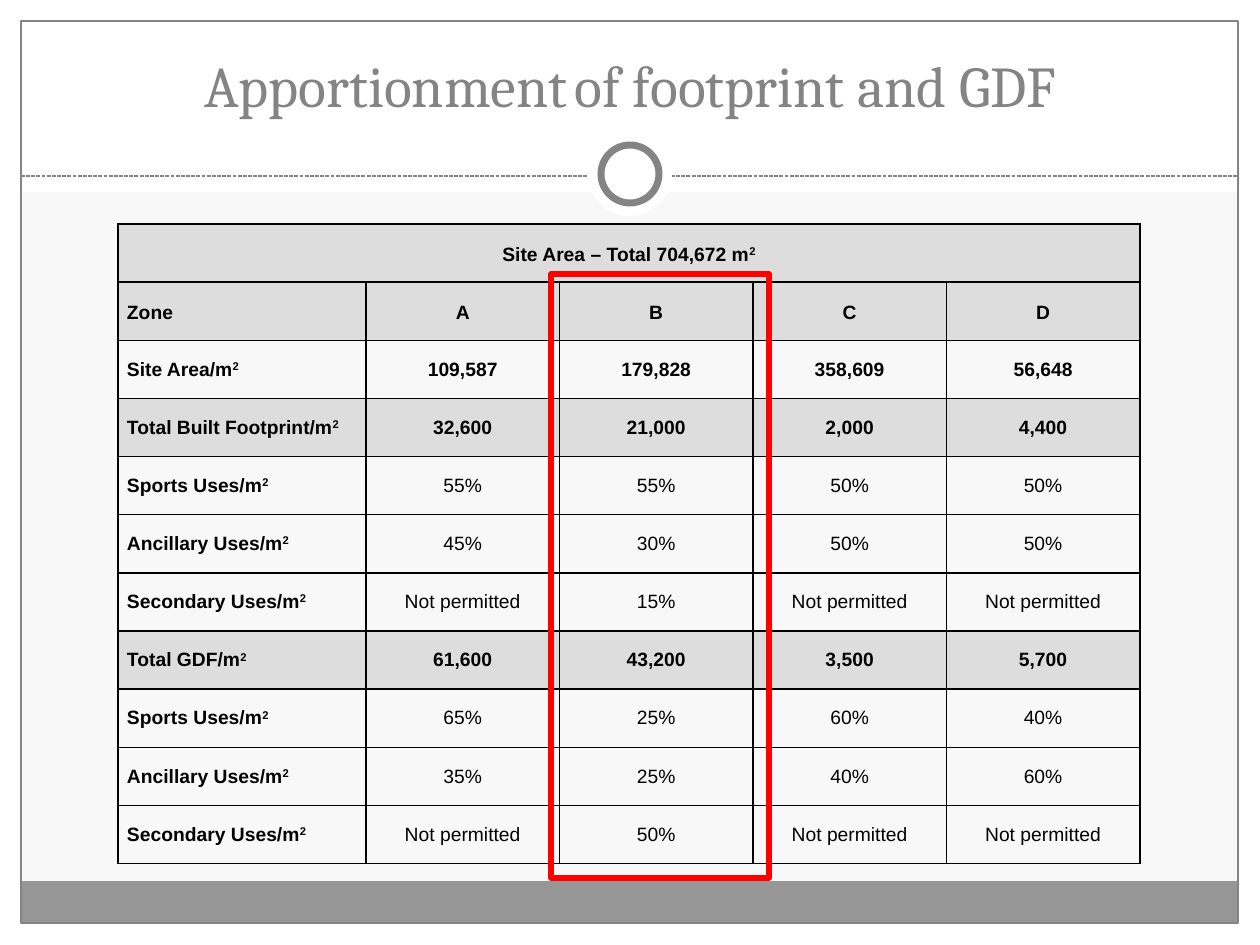
import pptx
import pptx.util
import pptx.dml.color
import pptx.enum.dml
import pptx.enum.shapes
import pptx.enum.text
import pptx.oxml
import pptx.oxml.ns

# Content
TITLE = [("Apportionment", 33), (" ", 18), ("of footprint and GDF", 33)]
CAPTION = "Site Area – Total 704,672 m²"
ZONES = ["Zone", "A", "B", "C", "D"]
NO = "Not permitted"
USES = [  # label, values, bold values, shaded row
    ("Site Area/m²", ["109,587", "179,828", "358,609", "56,648"], True, False),
    ("Total Built Footprint/m²", ["32,600", "21,000", "2,000", "4,400"], True, True),
    ("Sports Uses/m²", ["55%", "55%", "50%", "50%"], False, False),
    ("Ancillary Uses/m²", ["45%", "30%", "50%", "50%"], False, False),
    ("Secondary Uses/m²", [NO, "15%", NO, NO], False, False),
    ("Total GDF/m²", ["61,600", "43,200", "3,500", "5,700"], True, True),
    ("Sports Uses/m²", ["65%", "25%", "60%", "40%"], False, False),
    ("Ancillary Uses/m²", ["35%", "25%", "40%", "60%"], False, False),
    ("Secondary Uses/m²", [NO, "50%", NO, NO], False, False),
]

# Layout, in px
WIDTH, HEIGHT = 1260, 945
TABLE_BOX = (118, 224, 1022, 640)
LABEL_WIDTH = 248
HIGHLIGHT_BOX = (551, 274, 218, 604)
WHITE, GREY, FOOTER, SHADE, RED, BLACK = (
    "FFFFFF", "848484", "969696", "DDDDDD", "FF0000", "000000")
BACKDROP = [  # preset, box, fill, line, line width in pt
    ("RECTANGLE", (0, 924, WIDTH, 21), WHITE, None, 0),
    ("RECTANGLE", (0, 0, WIDTH, 192), WHITE, None, 0),
    ("RECTANGLE", (0, 0, 21, HEIGHT), WHITE, None, 0),
    ("RECTANGLE", (1239, 0, 21, HEIGHT), WHITE, None, 0),
    ("RECTANGLE", (21, 881, 1217, 43), FOOTER, None, 0),
    ("RECTANGLE", (21, 21, 1217, 902), None, GREY, 0.75),
]
MEDALLION = [
    ("OVAL", (588, 132, 84, 84), WHITE, None, 0),
    ("OVAL", (601, 145, 58, 58), WHITE, GREY, 4),
]

ALIGN = pptx.enum.text.PP_ALIGN
MIDDLE = pptx.enum.text.MSO_ANCHOR.MIDDLE


def px(length):
    return pptx.util.Emu(round(length * 914400 / 126))


def color(value):
    return pptx.dml.color.RGBColor.from_string(value)


def set_fill(fill, value):
    if value:
        fill.solid()
        fill.fore_color.rgb = color(value)
    else:
        fill.background()


def draw(preset, box, fill, line, width):
    kind = getattr(pptx.enum.shapes.MSO_SHAPE, preset)
    shape = slide.shapes.add_shape(kind, *map(px, box))
    shape.shadow.inherit = False
    set_fill(shape.fill, fill)
    set_fill(shape.line.fill, line)
    if line:
        shape.line.width = pptx.util.Pt(width)


def add_run(paragraph, text, size, font, value, bold=False):
    run = paragraph.add_run()
    run.text = text
    run.font.size = pptx.util.Pt(size)
    run.font.name = font
    run.font.bold = bold
    run.font.color.rgb = color(value)
    return run


def add_border(cell):
    properties = cell._tc.get_or_add_tcPr()
    for side in ("lnL", "lnR", "lnT", "lnB"):
        properties.append(pptx.oxml.parse_xml(
            f'<a:{side} {pptx.oxml.ns.nsdecls("a")} w="12700"><a:solidFill>'
            f'<a:srgbClr val="{BLACK}"/></a:solidFill></a:{side}>'))


def fill_cell(cell, text, align, bold, shade, before, after, spacing=None):
    add_border(cell)
    set_fill(cell.fill, shade)
    cell.vertical_anchor = MIDDLE
    cell.margin_left = cell.margin_right = px(9)
    cell.margin_top = cell.margin_bottom = 0
    paragraph = cell.text_frame.paragraphs[0]
    paragraph.alignment = align
    paragraph.space_before = pptx.util.Pt(before)
    paragraph.space_after = pptx.util.Pt(after)
    paragraph.line_spacing = spacing
    add_run(paragraph, text.removesuffix("²"), 11, "Arial", BLACK, bold)
    if text.endswith("²"):
        square = add_run(paragraph, "2", 11, "Arial", BLACK, bold)
        square._r.get_or_add_rPr().set("baseline", "30000")


prs = pptx.Presentation()
prs.slide_width, prs.slide_height = px(WIDTH), px(HEIGHT)
slide = prs.slides.add_slide(prs.slide_layouts[5])
set_fill(slide.background.fill, "F8F8F8")

# Frame, dashed divider and medallion
for part in BACKDROP:
    draw(*part)
divider = slide.shapes.add_connector(
    pptx.enum.shapes.MSO_CONNECTOR.STRAIGHT, px(21), px(176), px(1239), px(176))
divider.line.color.rgb = color(GREY)
divider.line.width = pptx.util.Pt(0.75)
divider.line.dash_style = pptx.enum.dml.MSO_LINE.SQUARE_DOT
divider._element.spPr.append(pptx.oxml.parse_xml(
    f'<a:effectLst {pptx.oxml.ns.nsdecls("a")}/>'))
for part in MEDALLION:
    draw(*part)

# Title, brought in front of the frame
title = slide.shapes.title
slide.shapes._spTree.append(title._element)
title.left, title.top, title.width, title.height = map(px, (42, 32, 1176, 105))
title.text_frame.vertical_anchor = MIDDLE
title.text_frame.paragraphs[0].alignment = ALIGN.CENTER
for text, size in TITLE:
    add_run(title.text_frame.paragraphs[0], text, size, "Cambria", GREY)

# Table
row_count, column_count = len(USES) + 2, len(ZONES)
table = slide.shapes.add_table(row_count, column_count, *map(px, TABLE_BOX)).table
table.first_row = table.horz_banding = False
zone_width = (TABLE_BOX[2] - LABEL_WIDTH) / (column_count - 1)
for index, column in enumerate(table.columns):
    column.width = px(zone_width if index else LABEL_WIDTH)
for row in table.rows:
    row.height = px(TABLE_BOX[3] / row_count)

table.cell(0, 0).merge(table.cell(0, column_count - 1))
fill_cell(table.cell(0, 0), CAPTION, ALIGN.CENTER, True, SHADE, 12, 0, 1.15)
for index in range(1, column_count):
    add_border(table.cell(0, index))
for index, zone in enumerate(ZONES):
    align = ALIGN.CENTER if index else ALIGN.LEFT
    fill_cell(table.cell(1, index), zone, align, True, SHADE, 12, 12, 1.15)
for row, (label, values, bold, shaded) in enumerate(USES, start=2):
    shade = SHADE if shaded else None
    fill_cell(table.cell(row, 0), label, ALIGN.LEFT, True, shade, 6, 6)
    for index, value in enumerate(values, start=1):
        fill_cell(table.cell(row, index), value, ALIGN.CENTER, bold, shade, 6, 6)

# Highlight around zone B
draw("RECTANGLE", HIGHLIGHT_BOX, None, RED, 3)

prs.save("out.pptx")
